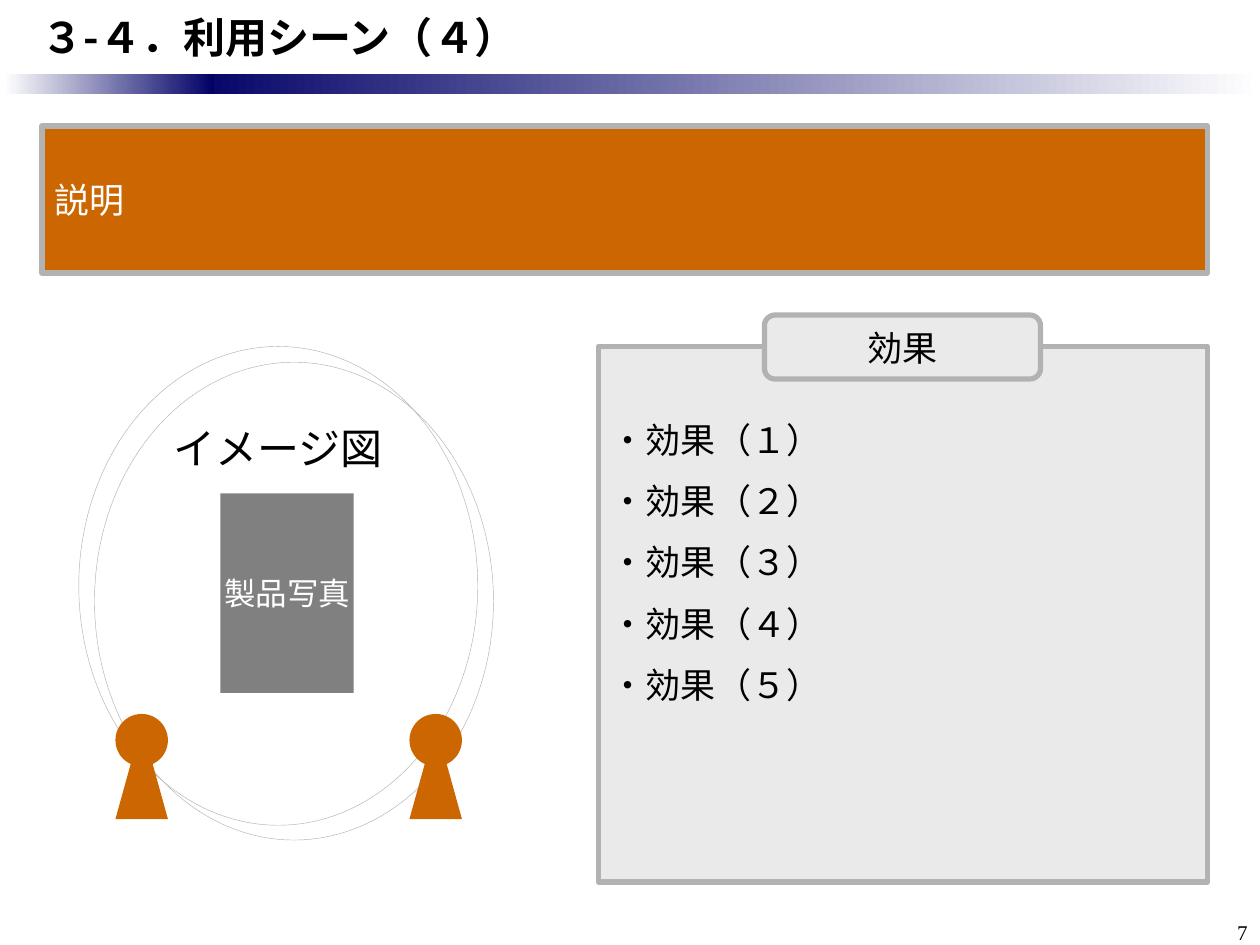
from dataclasses import dataclass
from typing import Optional

from lxml.etree import SubElement
from pptx import Presentation
from pptx.dml.color import RGBColor
from pptx.enum.shapes import MSO_SHAPE as Kind
from pptx.enum.text import MSO_ANCHOR as Anchor, PP_ALIGN as Align
from pptx.oxml.ns import qn
from pptx.util import Inches, Pt

CELL = Inches(1) / 12  # the slide is a grid of 120 columns by 90 rows
NAVY = RGBColor(0x00, 0x00, 0x66)
WHITE = RGBColor(0xFF, 0xFF, 0xFF)
BLACK = RGBColor(0x00, 0x00, 0x00)
ORANGE = RGBColor(0xCC, 0x66, 0x00)
SILVER = RGBColor(0xB2, 0xB2, 0xB2)
PALE = RGBColor(0xEA, 0xEA, 0xEA)
GRAY = RGBColor(0x80, 0x80, 0x80)
GOTHIC = "Noto Sans CJK JP"
ROMAN = "Times New Roman"


@dataclass(frozen=True)
class Box:
    """A place on the grid, in columns and rows."""
    col: float
    row: float
    wide: float
    high: float

    def place(self) -> list[int]:
        return [round(n * CELL) for n in (self.col, self.row, self.wide, self.high)]


@dataclass(frozen=True)
class Words:
    lines: tuple[str, ...]
    size: float
    font: str = ROMAN
    color: RGBColor = BLACK
    align: Align = Align.LEFT
    anchor: Anchor = Anchor.MIDDLE
    bold: bool = False
    wrap: bool = True
    left: float = 0.1
    top: float = 0.05
    gap: float = 0


@dataclass(frozen=True)
class Form:
    box: Box
    kind: Kind = Kind.RECTANGLE
    fill: Optional[RGBColor] = None
    edge: float = 0
    words: Optional[Words] = None


def write(shape, words: Words) -> None:
    frame = shape.text_frame
    frame.word_wrap = words.wrap
    frame.vertical_anchor = words.anchor
    frame.margin_left = Inches(words.left)
    frame.margin_top = Inches(words.top)
    for i, line in enumerate(words.lines):
        para = frame.add_paragraph() if i else frame.paragraphs[0]
        para.alignment = words.align
        para.space_after = Pt(words.gap)
        run = para.add_run()
        run.text = line
        font = run.font
        font.name, font.size, font.bold = words.font, Pt(words.size), words.bold
        font.color.rgb = words.color
        if words.font == GOTHIC:
            SubElement(run._r.get_or_add_rPr(), qn("a:ea"), typeface=GOTHIC)


def label(slide, box: Box, words: Words) -> None:
    write(slide.shapes.add_textbox(*box.place()), words)


def draw(shapes, form: Form):
    shape = shapes.add_shape(form.kind, *form.box.place())
    shape.shadow.inherit = False
    if form.fill is None:
        shape.fill.background()
    else:
        shape.fill.solid()
        shape.fill.fore_color.rgb = form.fill
    if form.edge:
        shape.line.color.rgb = SILVER
        shape.line.width = Pt(form.edge)
    else:
        shape.line.fill.background()
    if form.words:
        write(shape, form.words)
    return shape


def fade(slide, box: Box, start: RGBColor, end: RGBColor) -> None:
    fill = draw(slide.shapes, Form(box)).fill
    fill.gradient()
    fill.gradient_angle = 0
    for stop, spot, color in zip(fill.gradient_stops, (0, 1), (start, end)):
        stop.position = spot
        stop.color.rgb = color


def person(slide, col: float, row: float) -> None:
    group = slide.shapes.add_group_shape()
    draw(group.shapes, Form(Box(col, row + 1, 5, 9), Kind.ISOSCELES_TRIANGLE, ORANGE))
    draw(group.shapes, Form(Box(col, row, 5, 5), Kind.OVAL, ORANGE))


EFFECTS = tuple(f"・効果（{n}）" for n in "１２３４５")
PANELS = (
    Form(Box(4, 12, 111, 14), fill=ORANGE, edge=3,
         words=Words(("説明",), 20, GOTHIC, WHITE)),
    Form(Box(57, 33, 58, 51), fill=PALE, edge=3,
         words=Words(EFFECTS, 20, GOTHIC, anchor=Anchor.TOP, top=0.57, gap=11)),
    Form(Box(72.8, 30, 26.3, 6.1), Kind.ROUNDED_RECTANGLE, PALE, 3,
         Words(("効果",), 20, align=Align.CENTER)),
    Form(Box(7.5, 33, 38, 45.6), Kind.OVAL, edge=0.25,
         words=Words(("イメージ図",), 24, align=Align.CENTER,
                     anchor=Anchor.TOP, wrap=False)),
    Form(Box(9, 34.5, 38, 45.5), Kind.OVAL, edge=0.25),
)
PHOTO = Form(Box(21, 47, 12.7, 19), fill=GRAY,
             words=Words(("製品写真",), 18, color=WHITE, align=Align.CENTER, wrap=False))


def main() -> None:
    deck = Presentation()
    deck.slide_width, deck.slide_height = Inches(10), Inches(7.5)
    slide = deck.slides.add_slide(deck.slide_layouts[6])
    fade(slide, Box(17, 7, 103, 2), NAVY, WHITE)
    fade(slide, Box(0.4, 7, 20, 2), WHITE, NAVY)
    label(slide, Box(113, 87, 7, 3),
          Words(("7",), 12, align=Align.RIGHT, anchor=Anchor.TOP))
    label(slide, Box(0, 0, 120, 7),
          Words(("３-４．利用シーン（４）",), 24, GOTHIC, bold=True, left=0.33))
    for form in PANELS:
        draw(slide.shapes, form)
    for col in (11, 39):
        person(slide, col, 68)
    draw(slide.shapes, PHOTO)
    deck.save("out.pptx")


if __name__ == "__main__":
    main()
